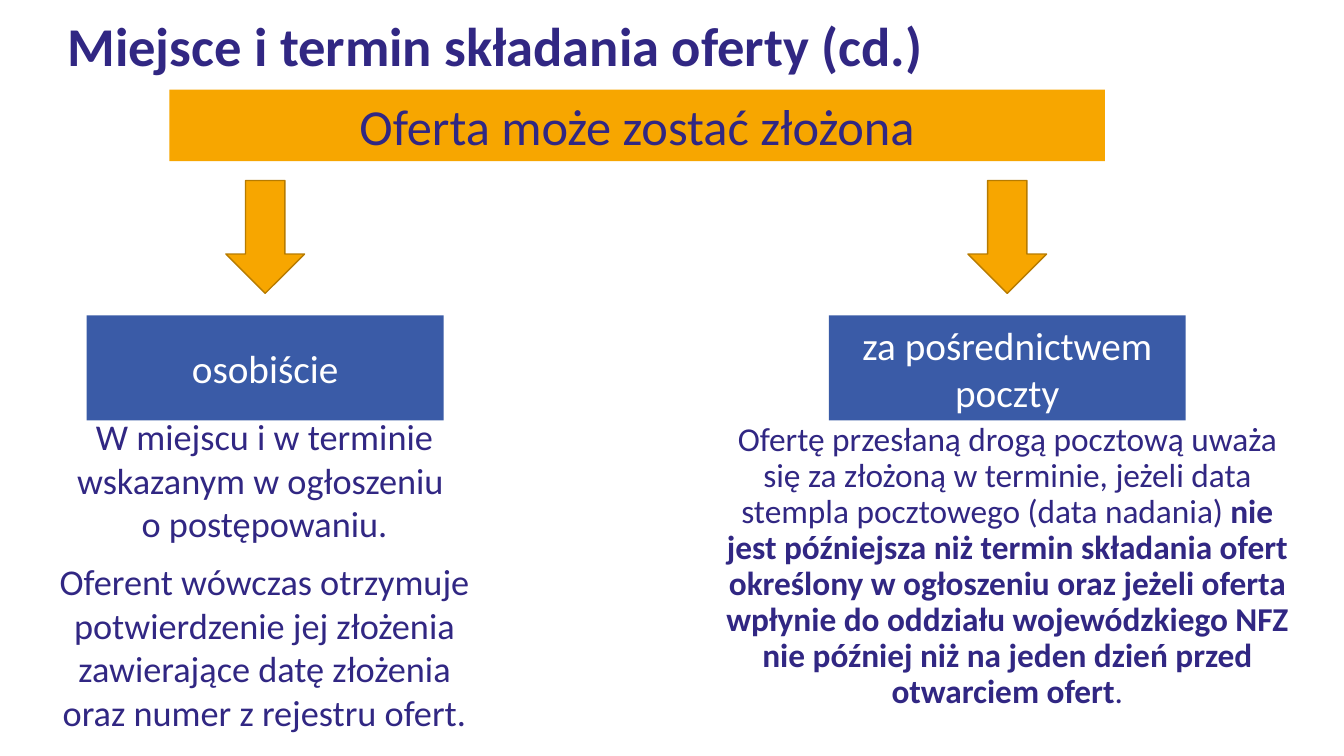
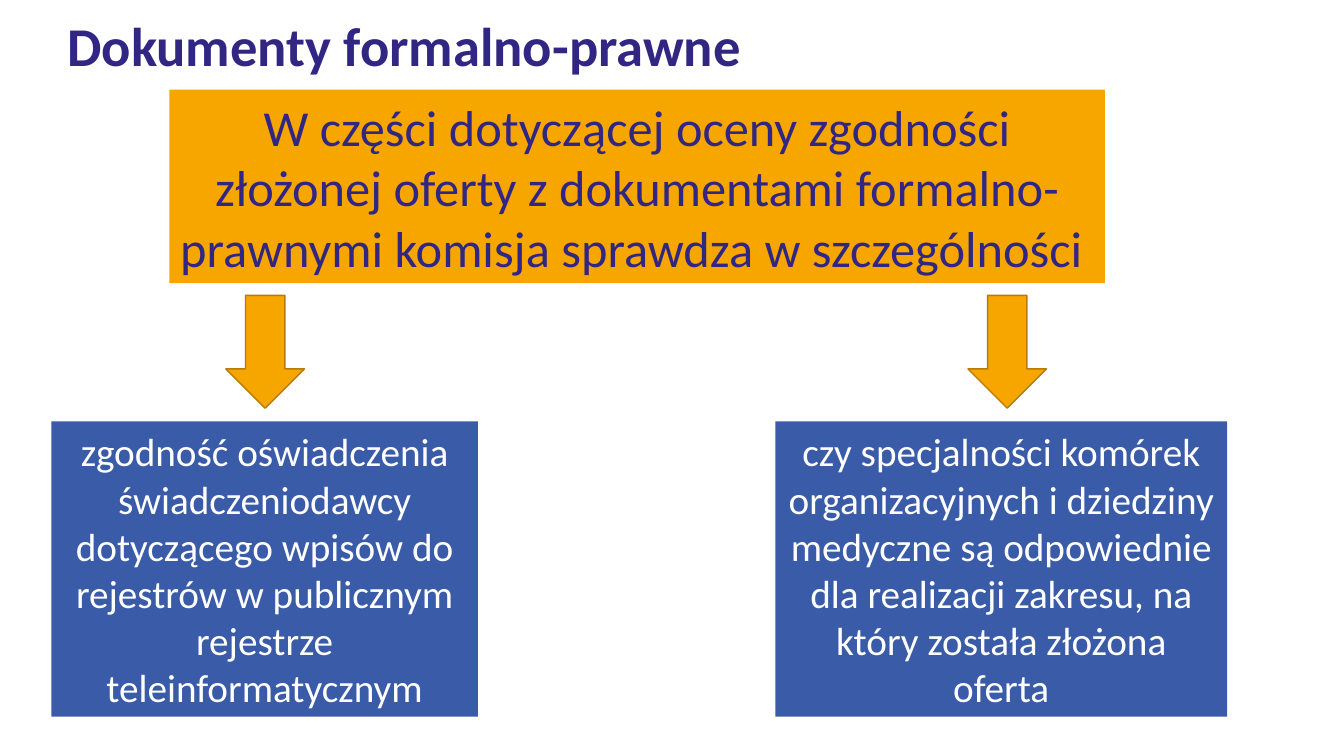
from pptx import Presentation
from pptx.dml.color import RGBColor
from pptx.enum import shapes, text
from pptx.util import Inches, Pt

HUES = {"navy": "312783", "gold": "F7A600", "rim": "B77B00",
        "blue": "3A5BA7", "white": "FFFFFF"}
FONT = "Calibri"
MIDS = (2.63, 9.99)  # centres of the two columns
ARROW_W, ARROW_H = 0.78, 1.12


def add_box(slide, kind, at, fill=None, line=None):
    """Add a preset shape, or a text box when kind is None."""
    at = [Inches(n) for n in at]
    if kind is None:
        return slide.shapes.add_textbox(*at)
    box = slide.shapes.add_shape(kind, *at)
    box.shadow.inherit = False
    box.fill.solid()
    box.fill.fore_color.rgb = RGBColor.from_string(HUES[fill])
    if line:
        box.line.color.rgb = RGBColor.from_string(HUES[line])
        box.line.width = Pt(1)
    else:
        box.line.fill.background()
    return box


def write(box, paras, size, hue="navy", align=text.PP_ALIGN.CENTER, space=1):
    """Fill a box; each paragraph is a list of (words, bold) runs."""
    frame = box.text_frame
    frame.word_wrap = True
    frame.vertical_anchor = text.MSO_ANCHOR.MIDDLE
    for i, runs in enumerate(paras):
        para = frame.add_paragraph() if i else frame.paragraphs[0]
        para.alignment = align
        para.line_spacing = space
        if i:
            para.space_before = Pt(10)
        for words, bold in runs:
            for j, part in enumerate(words.split("\n")):
                if j:
                    para.add_line_break()
                run = para.add_run()
                run.text = part
                run.font.name = FONT
                run.font.size = Pt(size)
                run.font.bold = bold
                run.font.color.rgb = RGBColor.from_string(HUES[hue])


# Boxes: left, width, words. Notes: place, size, line spacing, paragraphs.
PAGES = [
    {"title": "Miejsce i termin składania oferty (cd.)",
     "banner": "Oferta może zostać złożona",
     "banner_h": 0.71, "arrow_y": 1.79, "box_y": 3.13, "box_h": 1.04,
     "boxes": [(0.86, 3.54, "osobiście"),
               (8.22, 3.54, "za pośrednictwem poczty")],
     "notes": [
         ((0.46, 4.06, 4.33, 3.27), 25.9, 1, [
             [("W miejscu i w terminie wskazanym w ogłoszeniu \n"
               "o postępowaniu.", False)],
             [("Oferent wówczas otrzymuje potwierdzenie jej złożenia "
               "zawierające datę złożenia oraz numer z rejestru ofert.",
               False)]]),
         ((7.02, 4.06, 5.94, 3.12), 23.8, 0.9, [
             [("Ofertę przesłaną drogą pocztową uważa się za złożoną "
               "w terminie, jeżeli data stempla pocztowego "
               "(data nadania) ", False),
              ("nie jest późniejsza niż termin składania ofert określony "
               "w ogłoszeniu oraz jeżeli oferta wpłynie do oddziału "
               "wojewódzkiego NFZ nie później niż na jeden dzień przed "
               "otwarciem ofert", True),
              (".", False)]])]},
    {"title": "Dokumenty formalno-prawne",
     "banner": "W części dotyczącej oceny zgodności złożonej oferty "
               "z dokumentami formalno-prawnymi komisja sprawdza "
               "w szczególności ",
     "banner_h": 1.92, "arrow_y": 2.93, "box_y": 4.18, "box_h": 2.93,
     "boxes": [(0.51, 4.23, "zgodność oświadczenia świadczeniodawcy "
                "dotyczącego wpisów do rejestrów w publicznym rejestrze "
                "teleinformatycznym"),
               (7.69, 4.48, "czy specjalności komórek organizacyjnych "
                "i dziedziny medyczne są odpowiednie dla realizacji "
                "zakresu, na który została złożona oferta")],
     "notes": []},
]

deck = Presentation()
deck.slide_width, deck.slide_height = Inches(13.33), Inches(7.5)
RECT = shapes.MSO_SHAPE.RECTANGLE
DOWN = shapes.MSO_SHAPE.DOWN_ARROW

for page in PAGES:
    slide = deck.slides.add_slide(deck.slide_layouts[6])
    title = add_box(slide, None, (0.57, 0, 11.5, 0.96))
    write(title, [[(page["title"], True)]], 39,
          align=text.PP_ALIGN.LEFT, space=0.9)
    banner = add_box(slide, RECT, (1.68, 0.89, 9.28, page["banner_h"]), "gold")
    write(banner, [[(page["banner"], False)]], 36)
    for left, width, words in page["boxes"]:
        box = add_box(slide, RECT,
                      (left, page["box_y"], width, page["box_h"]), "blue")
        write(box, [[(words, False)]], 28, "white")
    for mid in MIDS:
        add_box(slide, DOWN, (mid - ARROW_W / 2, page["arrow_y"],
                              ARROW_W, ARROW_H), "gold", "rim")
    for at, size, space, paras in page["notes"]:
        write(add_box(slide, None, at), paras, size, space=space)

deck.save("out.pptx")
